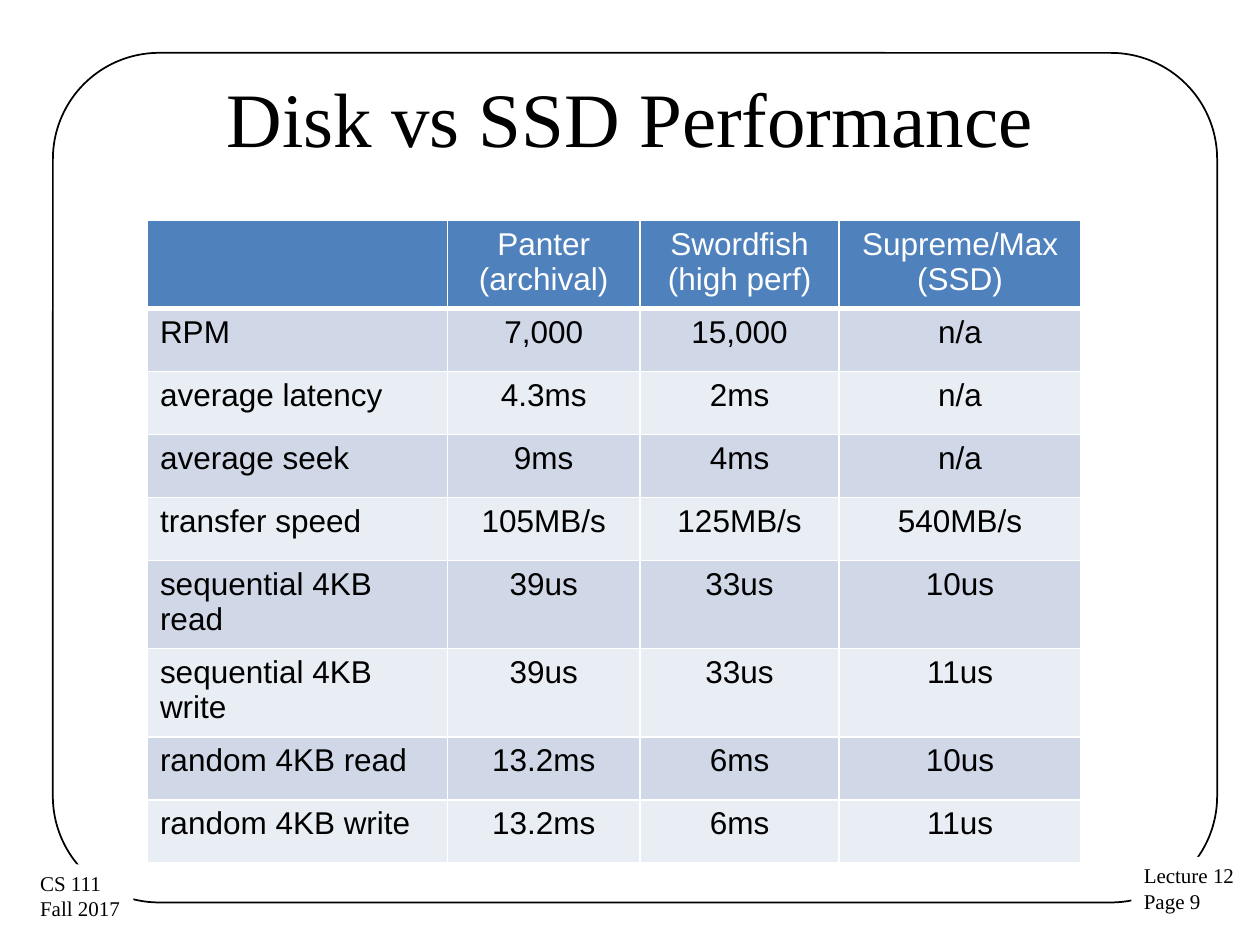
import pptx
import pptx.util
import pptx.dml.color
import pptx.enum.shapes
import pptx.enum.text
import pptx.oxml
import pptx.oxml.ns

COLORS = {"ink": "000000", "paper": "FFFFFF", "header": "4F81BD",
          "band_dark": "D0D8E8", "band_light": "E9EDF4"}
SERIF, SANS = "Times New Roman", "Arial"
ALIGN = pptx.enum.text.PP_ALIGN


def rgb(name):
    return pptx.dml.color.RGBColor.from_string(COLORS[name])


def write(tf, text, size=18, font=SANS, color="ink", align=ALIGN.LEFT):
    for i, line in enumerate(text.split("\n")):
        p = tf.add_paragraph() if i else tf.paragraphs[0]
        p.alignment = align
        r = p.add_run()
        r.text = line
        r.font.size = pptx.util.Pt(size)
        r.font.name = font
        r.font.bold = False
        r.font.color.rgb = rgb(color)


prs = pptx.Presentation()
prs.slide_width = W = pptx.util.Inches(10)
prs.slide_height = H = pptx.util.Inches(7.5)
s = prs.slides.add_slide(prs.slide_layouts[6])

frame = s.shapes.add_shape(pptx.enum.shapes.MSO_SHAPE.ROUNDED_RECTANGLE,
                           int(W * 0.042), int(H * 0.056), int(W * 0.924), int(H * 0.899))
frame.adjustments[0] = 0.125
frame.shadow.inherit = False
frame.fill.background()
frame.line.color.rgb = rgb("ink")
frame.line.width = pptx.util.Pt(1)

footers = [(0.898, 6.8, 0.093, "Lecture 12\nPage 9"),
           (0.022, 6.86, 0.084, "CS 111\nFall 2017")]
for left, top, width, text in footers:
    sp = s.shapes.add_textbox(int(W * left), int(H * top / 7.5), int(W * width), int(H * 0.068))
    sp.fill.solid()
    sp.fill.fore_color.rgb = rgb("paper")
    sp.text_frame.word_wrap = False
    sp.text_frame.auto_size = pptx.enum.text.MSO_AUTO_SIZE.SHAPE_TO_FIT_TEXT
    write(sp.text_frame, text, size=12, font=SERIF)

title = s.shapes.add_textbox(int(W * 0.05), int(H * 0.04), int(W * 0.9), int(H / 6))
title.text_frame.word_wrap = True
title.text_frame.vertical_anchor = pptx.enum.text.MSO_ANCHOR.MIDDLE
write(title.text_frame, "Disk vs SSD Performance", size=44, font=SERIF, align=ALIGN.CENTER)

rows = [
    ["", "Panter\n(archival)", "Swordfish\n(high perf)", "Supreme/Max\n(SSD)"],
    ["RPM", "7,000", "15,000", "n/a"],
    ["average latency", "4.3ms", "2ms", "n/a"],
    ["average seek", "9ms", "4ms", "n/a"],
    ["transfer speed", "105MB/s", "125MB/s", "540MB/s"],
    ["sequential 4KB read", "39us", "33us", "10us"],
    ["sequential 4KB write", "39us", "33us", "11us"],
    ["random 4KB read", "13.2ms", "6ms", "10us"],
    ["random 4KB write", "13.2ms", "6ms", "11us"],
]
col_shares = [0.238, 0.153, 0.158, 0.192]
row_height = int(H / 15)
table = s.shapes.add_table(len(rows), len(col_shares), int(W * 0.117), int(H * 0.233),
                           int(W * sum(col_shares)), row_height * len(rows)).table
for column, share in zip(table.columns, col_shares):
    column.width = int(W * share)

for i, row in enumerate(rows):
    table.rows[i].height = row_height
    band = "header" if i == 0 else "band_dark" if i % 2 else "band_light"
    for j, text in enumerate(row):
        cell = table.cell(i, j)
        write(cell.text_frame, text, color="ink" if i else "paper",
              align=ALIGN.CENTER if j else ALIGN.LEFT)
        tcPr = cell._tc.get_or_add_tcPr()
        for side in "LRTB":
            points = 3 if i == 0 and side == "B" else 1
            tcPr.append(pptx.oxml.parse_xml(
                f'<a:ln{side} {pptx.oxml.ns.nsdecls("a")} w="{pptx.util.Pt(points)}"><a:solidFill>'
                f'<a:srgbClr val="{COLORS["paper"]}"/></a:solidFill></a:ln{side}>'))
        cell.fill.solid()
        cell.fill.fore_color.rgb = rgb(band)

prs.save("out.pptx")
